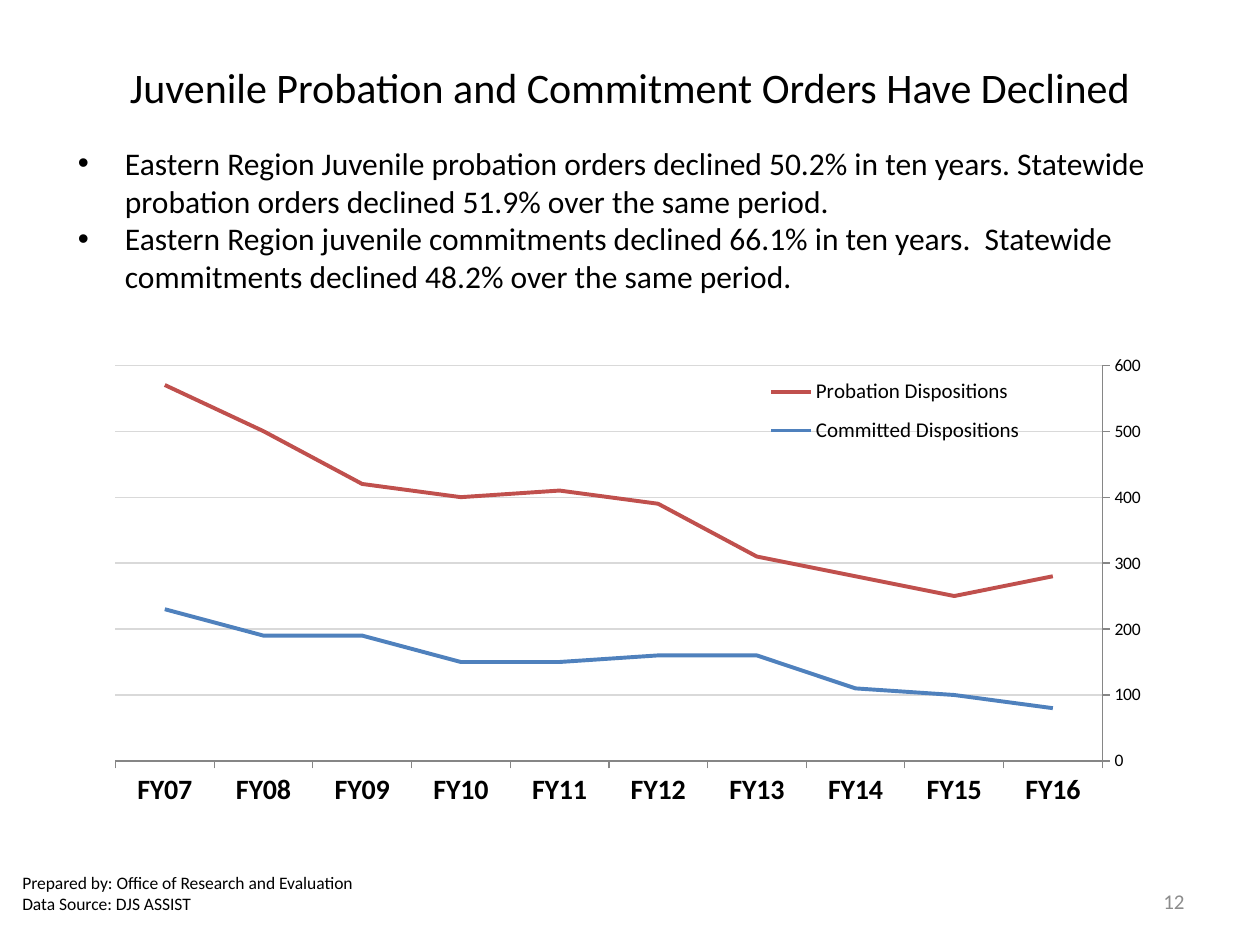
from dataclasses import dataclass

from lxml.etree import SubElement
from pptx import Presentation
from pptx.chart.data import CategoryChartData
from pptx.dml.color import RGBColor
from pptx.enum.chart import XL_AXIS_CROSSES, XL_CHART_TYPE, XL_LEGEND_POSITION, XL_TICK_MARK
from pptx.enum.text import MSO_ANCHOR, PP_ALIGN
from pptx.oxml import parse_xml
from pptx.oxml.ns import nsdecls, qn
from pptx.util import Cm, Pt


@dataclass(frozen=True)
class Theme:
    font: str = "Calibri"
    text: RGBColor = RGBColor(0, 0, 0)
    muted: RGBColor = RGBColor(0x8C, 0x8C, 0x8C)
    axis: RGBColor = RGBColor(0x86, 0x86, 0x86)
    grid: RGBColor = RGBColor(0xD9, 0xD9, 0xD9)
    probation: RGBColor = RGBColor(0xC0, 0x50, 0x4D)
    committed: RGBColor = RGBColor(0x4F, 0x81, 0xBD)
    title_size: Pt = Pt(24)
    body_size: Pt = Pt(18)
    category_size: Pt = Pt(16)
    small_size: Pt = Pt(12)
    note_size: Pt = Pt(10)


theme = Theme()


def write_lines(shape, lines, size, color, alignment, anchor=MSO_ANCHOR.MIDDLE):
    frame = shape.text_frame
    frame.word_wrap = True
    frame.vertical_anchor = anchor
    for index, line in enumerate(lines):
        paragraph = frame.add_paragraph() if index else frame.paragraphs[0]
        paragraph.alignment = alignment
        run = paragraph.add_run()
        run.text = line
        run.font.name = theme.font
        run.font.size = size
        run.font.color.rgb = color
    return frame


def layout_xml(left, top, width, height, target=""):
    return parse_xml(
        f'<c:layout {nsdecls("c")}><c:manualLayout>{target}'
        '<c:xMode val="edge"/><c:yMode val="edge"/>'
        f'<c:x val="{left}"/><c:y val="{top}"/><c:w val="{width}"/><c:h val="{height}"/>'
        "</c:manualLayout></c:layout>"
    )


presentation = Presentation()
presentation.slide_width = Cm(25.4)
presentation.slide_height = Cm(19.05)
slide = presentation.slides.add_slide(presentation.slide_layouts[5])

title = slide.shapes.title
title.left, title.top, title.width, title.height = Cm(0), Cm(0.76), Cm(25.4), Cm(1.98)
write_lines(title, ["Juvenile Probation and Commitment Orders Have Declined"],
            theme.title_size, theme.text, PP_ALIGN.CENTER)

findings = slide.shapes.add_textbox(Cm(1.32), Cm(2.9), Cm(23.06), Cm(3.6))
findings_frame = write_lines(findings, [
    "Eastern Region Juvenile probation orders declined 50.2% in ten years. Statewide probation orders declined 51.9% over the same period.",
    "Eastern Region juvenile commitments declined 66.1% in ten years.  Statewide commitments declined 48.2% over the same period.",
], theme.body_size, theme.text, PP_ALIGN.LEFT, MSO_ANCHOR.TOP)
findings_frame.margin_top = Cm(0)
for paragraph in findings_frame.paragraphs:
    properties = paragraph._p.get_or_add_pPr()
    properties.set("marL", str(Cm(0.95)))
    properties.set("indent", str(-Cm(0.95)))
    SubElement(properties, qn("a:buFont")).set("typeface", "Arial")
    SubElement(properties, qn("a:buChar")).set("char", "•")

slide_number = slide.shapes.add_textbox(Cm(18.21), Cm(17.65), Cm(5.92), Cm(1.02))
write_lines(slide_number, ["12"], theme.small_size, theme.muted, PP_ALIGN.RIGHT)

source_note = slide.shapes.add_textbox(Cm(0.2), Cm(17.35), Cm(7.42), Cm(1.32))
write_lines(source_note, ["Prepared by: Office of Research and Evaluation", "Data Source: DJS ASSIST"],
            theme.note_size, theme.text, PP_ALIGN.LEFT)

chart_data = CategoryChartData()
chart_data.categories = [f"FY{year:02}" for year in range(16, 6, -1)]
chart_data.add_series("Probation Dispositions", [280, 250, 280, 310, 390, 410, 400, 420, 500, 570])
chart_data.add_series("Committed Dispositions", [80, 100, 110, 160, 160, 150, 150, 190, 190, 230])
chart = slide.shapes.add_chart(XL_CHART_TYPE.LINE, Cm(1.9), Cm(6.78), Cm(21.39), Cm(9.73), chart_data).chart
chart.has_title = False
chart.font.name = theme.font
chart.font.size = theme.note_size
chart.font.color.rgb = theme.text

plot = chart.plots[0]
plot.vary_by_categories = False
for series, color in zip(plot.series, (theme.probation, theme.committed)):
    series.smooth = False
    series.format.line.color.rgb = color
    series.format.line.width = Pt(2.25)

category_axis, value_axis = chart.category_axis, chart.value_axis
for axis in (category_axis, value_axis):
    axis.major_tick_mark = XL_TICK_MARK.OUTSIDE
    axis.minor_tick_mark = XL_TICK_MARK.NONE
    axis.format.line.color.rgb = theme.axis
    axis.format.line.width = Pt(0.75)
category_axis.reverse_order = True
category_axis.crosses = XL_AXIS_CROSSES.MAXIMUM
category_axis.tick_labels.font.size = theme.category_size
category_axis.tick_labels.font.bold = True
value_axis.minimum_scale = 0
value_axis.maximum_scale = 600
value_axis.major_unit = 100
value_axis.tick_labels.number_format = r"#,##0_);\(#,##0\)"
value_axis.tick_labels.number_format_is_linked = False
value_axis.has_major_gridlines = True
value_axis.major_gridlines.format.line.color.rgb = theme.grid
value_axis.major_gridlines.format.line.width = Pt(0.75)

chart.has_legend = True
legend = chart.legend
legend.position = XL_LEGEND_POSITION.RIGHT
legend.include_in_layout = True
legend.font.size = theme.small_size

plot_area = chart._chartSpace.chart.plotArea
for element, layout in (
    (plot_area, layout_xml(0.02, 0.06, 0.93, 0.82, '<c:layoutTarget val="inner"/>')),
    (legend._element, layout_xml(0.63, 0.06, 0.25, 0.19)),
):
    for old_layout in element.findall(qn("c:layout")):
        element.remove(old_layout)
    if element is plot_area:
        element.insert(0, layout)
    else:
        element.find(qn("c:legendPos")).addnext(layout)

presentation.save("out.pptx")
